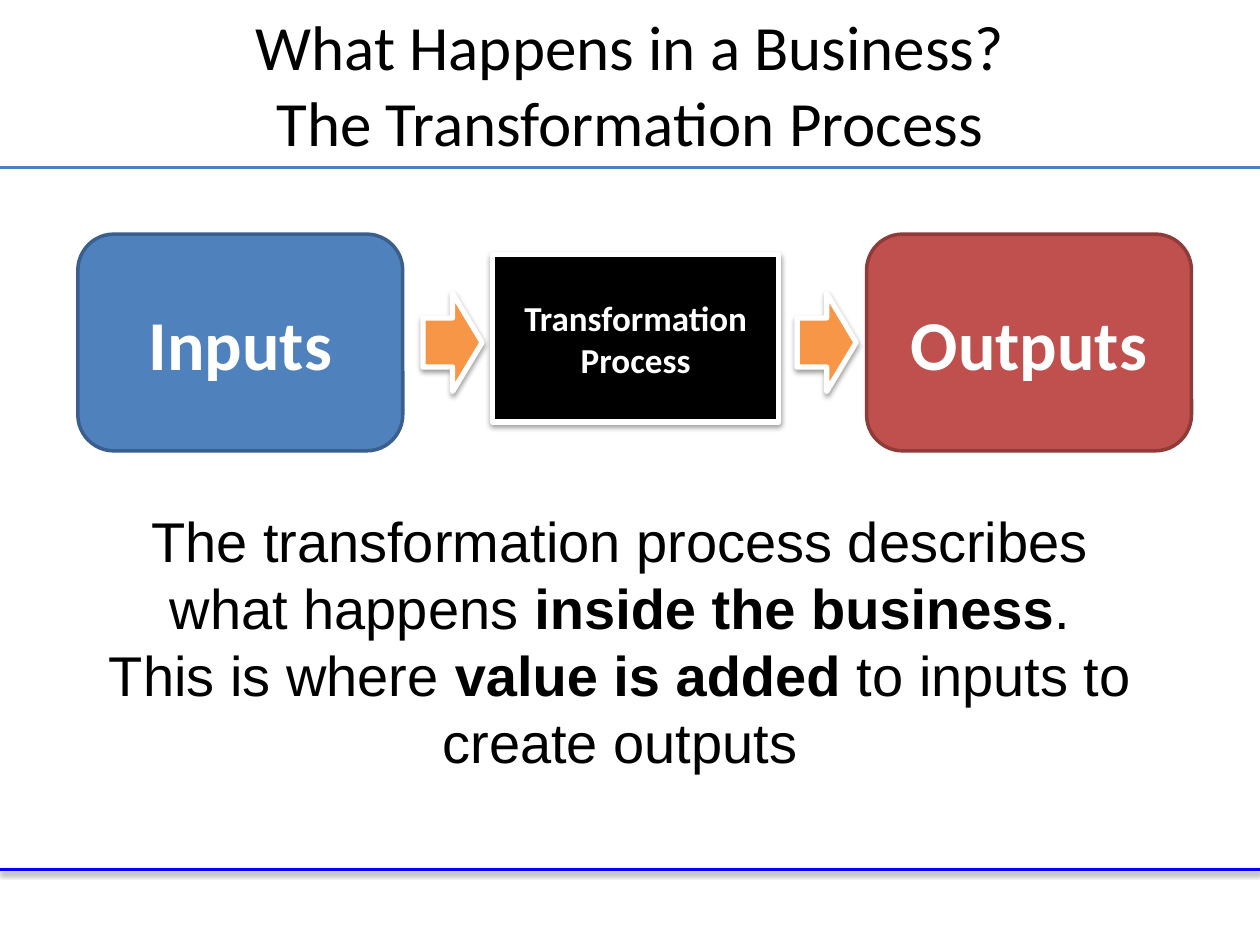
from lxml.etree import SubElement
from pptx import Presentation
from pptx.dml.color import RGBColor
from pptx.enum.shapes import MSO_CONNECTOR, MSO_SHAPE as Preset
from pptx.enum.text import MSO_ANCHOR as Anchor, MSO_AUTO_SIZE as AutoSize, PP_ALIGN as Align
from pptx.oxml.ns import qn
from pptx.util import Cm, Pt

COLOURS = {
    "text": "000000", "white": "FFFFFF", "title_rule": "4B7EBC", "footer_rule": "0000FF",
    "inputs": "4F81BD", "inputs_edge": "3A5F8C", "outputs": "C0504D", "outputs_edge": "8E3B39",
    "process": "000000", "arrow": "F79646", "shadow": "000000",
}
SLIDE_WIDTH, SLIDE_HEIGHT = 25.4, 19.05


def colour(name):
    return RGBColor.from_string(COLOURS[name])


def add_shadow(effects):
    """Put a soft shadow, falling straight down, in an effect list."""
    outer = SubElement(effects, qn("a:outerShdw"), blurRad=str(Pt(3.1)), dist=str(Pt(1.6)),
                       dir="5400000", rotWithShape="0")
    tint = SubElement(outer, qn("a:srgbClr"), val=COLOURS["shadow"])
    SubElement(tint, qn("a:alpha"), val="38000")


def add_run(paragraph, text, size, font="Calibri", ink="text", bold=False):
    run = paragraph.add_run()
    run.text = text
    run.font.name, run.font.size, run.font.bold = font, Pt(size), bold
    run.font.color.rgb = colour(ink)


def add_rule(slide, y, ink, weight, shadow=False):
    """Draw a line across the whole slide."""
    rule = slide.shapes.add_connector(MSO_CONNECTOR.STRAIGHT, 0, Cm(y), Cm(SLIDE_WIDTH), Cm(y))
    rule.line.color.rgb = colour(ink)
    rule.line.width = Pt(weight)
    effects = SubElement(rule._element.spPr, qn("a:effectLst"))
    if shadow:
        add_shadow(effects)


def add_block(slide, preset, box, fill, edge, weight, lines=(), size=20, shadow=False):
    """Draw a filled shape with one centred bold paragraph for each line."""
    block = slide.shapes.add_shape(preset, *map(Cm, box))
    block.fill.solid()
    block.fill.fore_color.rgb = colour(fill)
    block.line.color.rgb = colour(edge)
    block.line.width = Pt(weight)
    block.shadow.inherit = False
    if shadow:
        add_shadow(block._element.spPr.find(qn("a:effectLst")))
    frame = block.text_frame
    frame.word_wrap = True
    frame.vertical_anchor = Anchor.MIDDLE
    for index, line in enumerate(lines):
        paragraph = frame.add_paragraph() if index else frame.paragraphs[0]
        paragraph.alignment = Align.CENTER
        add_run(paragraph, line, size, ink="white", bold=True)


def add_centred_box(slide, box):
    frame = slide.shapes.add_textbox(*map(Cm, box)).text_frame
    frame.word_wrap = True
    frame.paragraphs[0].alignment = Align.CENTER
    return frame


def add_title(slide, box):
    frame = add_centred_box(slide, box)
    frame.vertical_anchor = Anchor.MIDDLE
    heading = frame.paragraphs[0]
    add_run(heading, "What Happens in a Business?", 36)
    heading.add_line_break()
    add_run(heading, "The Transformation Process", 36)


def add_flow(slide, box):
    """Inputs, process and outputs from left to right, joined by arrows."""
    left, top, width, height = box
    end_width = 6.55
    ends = (("Inputs", "inputs", left), ("Outputs", "outputs", left + width - end_width))
    for label, fill, x in ends:
        add_block(slide, Preset.ROUNDED_RECTANGLE, (x, top, end_width, height),
                  fill, f"{fill}_edge", 2, [label], 40)
    add_block(slide, Preset.FLOWCHART_PROCESS, (left + 8.36, top + 0.41, 5.77, 3.38),
              "process", "white", 3, ["Transformation", "Process"], shadow=True)
    arrow_height = 1.98
    for offset in (6.96, 14.5):
        add_block(slide, Preset.RIGHT_ARROW,
                  (left + offset, top + (height - arrow_height) / 2, 1.19, arrow_height),
                  "arrow", "white", 3, shadow=True)


def add_explanation(slide, box):
    frame = add_centred_box(slide, box)
    frame.auto_size = AutoSize.SHAPE_TO_FIT_TEXT
    sentences = (
        (("The transformation process describes what happens ", False),
         ("inside the business", True), (".", False)),
        (("This is where ", False), ("value is added ", True),
         ("to inputs to create outputs", False)),
    )
    paragraph = frame.paragraphs[0]
    for index, sentence in enumerate(sentences):
        if index:
            paragraph.add_line_break()
        for text, bold in sentence:
            add_run(paragraph, text, 32, "Arial", bold=bold)


def main():
    deck = Presentation()
    deck.slide_width, deck.slide_height = Cm(SLIDE_WIDTH), Cm(SLIDE_HEIGHT)
    slide = deck.slides.add_slide(deck.slide_layouts[6])
    add_rule(slide, 17.53, "footer_rule", 2, shadow=True)
    add_rule(slide, 3.37, "title_rule", 1.75)
    add_title(slide, (1.27, 0.2, 22.86, 2.97))
    add_flow(slide, (1.57, 4.72, 22.45, 4.37))
    add_explanation(slide, (1.78, 10.08, 21.44, 5.74))
    deck.save("out.pptx")


if __name__ == "__main__":
    main()
